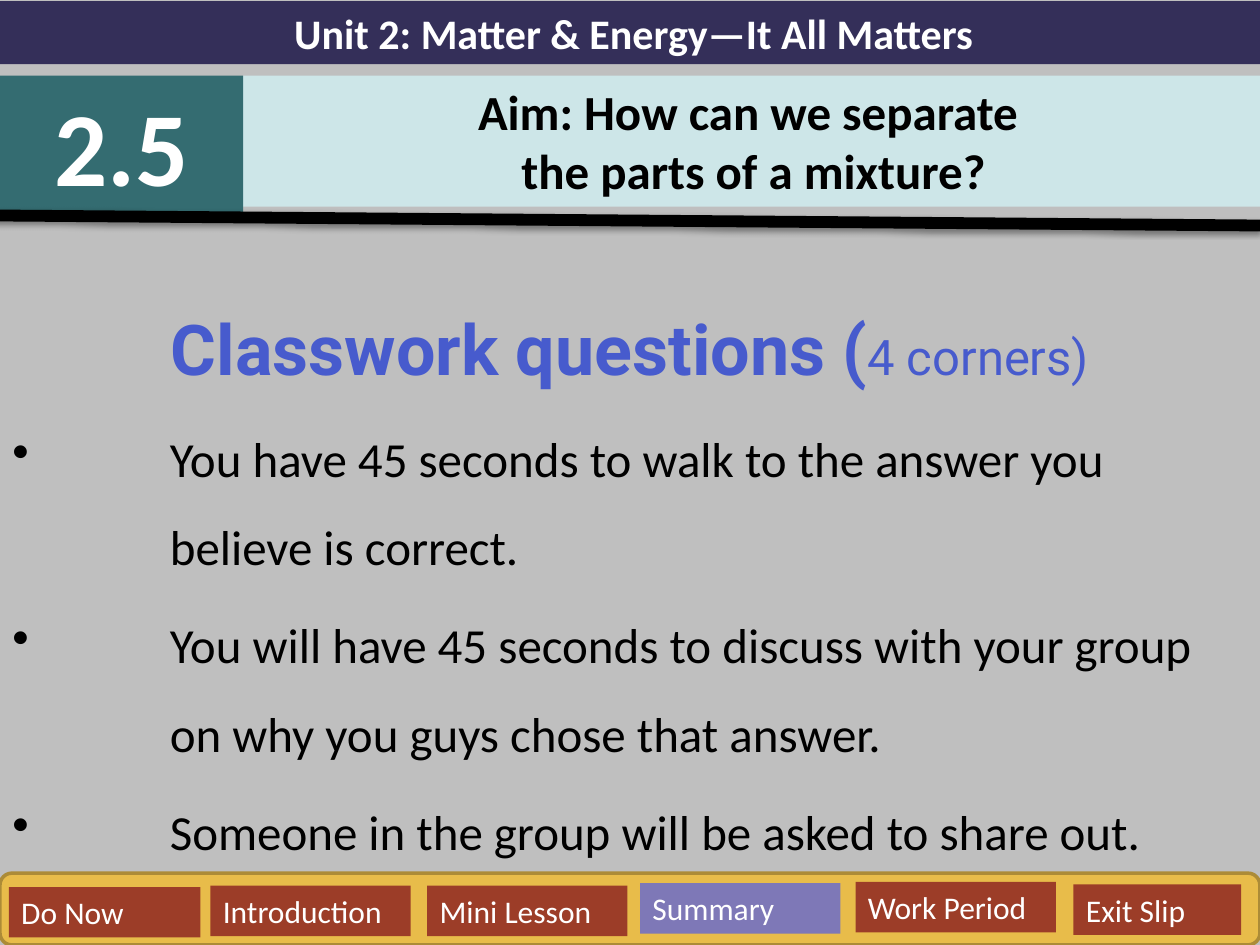
import dataclasses

import pptx
import pptx.dml.color
import pptx.enum.shapes
import pptx.enum.text
import pptx.oxml
import pptx.oxml.ns
import pptx.util

COLUMNS, ROWS = 100, 75
CELL = pptx.util.Inches(0.1)
ALIGN = pptx.enum.text.PP_ALIGN
SHAPES = pptx.enum.shapes.MSO_SHAPE


@dataclasses.dataclass(frozen=True)
class Theme:
    background: str = "BFBFBF"
    unit: str = "342F59"
    number: str = "346C71"
    aim: str = "CDE6E8"
    heading: str = "475BCD"
    bar: str = "E8BC4A"
    bar_edge: str = "AC8B37"
    tab: str = "9C3D28"
    active_tab: str = "7E78B7"
    light: str = "FFFFFF"
    dark: str = "000000"
    body_font: str = "Calibri"
    heading_font: str = "Roboto"
    number_size: int = 60
    heading_size: int = 40
    body_size: int = 28
    unit_size: int = 24
    tab_size: int = 18


THEME = Theme()


@dataclasses.dataclass(frozen=True)
class Box:
    left: float
    top: float
    width: float
    height: float

    def inner(self, left, top, width, height):
        return Box(self.left + left, self.top + top, width, height)

    def lengths(self):
        return [round(value * CELL) for value in dataclasses.astuple(self)]


def color(value):
    return pptx.dml.color.RGBColor.from_string(value)


def add_text(paragraph, text, size=THEME.body_size, font=THEME.body_font,
             fill=THEME.dark, bold=False, align=ALIGN.LEFT):
    paragraph.alignment = align
    run = paragraph.add_run()
    run.text = text
    run.font.size = pptx.util.Pt(size)
    run.font.name = font
    run.font.bold = bold
    run.font.color.rgb = color(fill)


def fill_shape(shape, fill):
    shape.fill.solid()
    shape.fill.fore_color.rgb = color(fill)


def add_panel(slide, box, fill, kind=SHAPES.RECTANGLE):
    shape = slide.shapes.add_shape(kind, *box.lengths())
    shape.shadow.inherit = False
    fill_shape(shape, fill)
    shape.line.fill.background()
    return shape


def add_label(slide, box, fill, text, **text_format):
    shape = add_panel(slide, box, fill)
    frame = shape.text_frame
    frame.word_wrap = True
    frame.vertical_anchor = pptx.enum.text.MSO_ANCHOR.TOP
    frame.auto_size = pptx.enum.text.MSO_AUTO_SIZE.SHAPE_TO_FIT_TEXT
    add_text(frame.paragraphs[0], text, fill=THEME.light, **text_format)


def place_aim(slide, box):
    title = slide.shapes.title
    title.left, title.top, title.width, title.height = box.lengths()
    fill_shape(title, THEME.aim)
    frame = title.text_frame
    frame.word_wrap = True
    frame.auto_size = pptx.enum.text.MSO_AUTO_SIZE.NONE
    frame.vertical_anchor = pptx.enum.text.MSO_ANCHOR.TOP
    lines = ("Aim: How can we separate ", "the parts of a mixture?")
    for index, line in enumerate(lines):
        paragraph = frame.add_paragraph() if index else frame.paragraphs[0]
        add_text(paragraph, line, bold=True, align=ALIGN.CENTER)


def add_rule(slide, box):
    left, top, width, height = box.lengths()
    rule = slide.shapes.add_connector(
        pptx.enum.shapes.MSO_CONNECTOR.STRAIGHT, left, top, left + width, top + height)
    rule.line.color.rgb = color(THEME.dark)
    rule.line.width = pptx.util.Pt(6.75)
    properties = rule.element.spPr
    properties.append(pptx.oxml.parse_xml(
        f'<a:effectLst {pptx.oxml.ns.nsdecls("a")}>'
        f'<a:outerShdw blurRad="{pptx.util.Pt(3.1)}" dist="{pptx.util.Pt(1.6)}" '
        f'dir="5400000" rotWithShape="0"><a:srgbClr val="{THEME.dark}">'
        '<a:alpha val="38000"/></a:srgbClr></a:outerShdw></a:effectLst>'))


def add_header(slide, box):
    add_label(slide, box.inner(0, 0, 100.6, 5), THEME.unit,
              "Unit 2: Matter & Energy—It All Matters",
              size=THEME.unit_size, bold=True, align=ALIGN.CENTER)
    add_label(slide, box.inner(0, 5.9, 19.3, 11.1), THEME.number, "2.5",
              size=THEME.number_size, bold=True, align=ALIGN.CENTER)
    place_aim(slide, box.inner(19.3, 5.9, 81, 10.4))
    add_rule(slide, box.inner(-0.5, 17, 100.5, 0.8))


def set_bullet(paragraph, indent):
    properties = paragraph._p.get_or_add_pPr()
    properties.set("marL", str(indent))
    properties.set("indent", str(-indent))
    properties.append(pptx.oxml.parse_xml(
        f'<a:buChar {pptx.oxml.ns.nsdecls("a")} char="•"/>'))


def add_questions(slide, box):
    frame = slide.shapes.add_textbox(*box.lengths()).text_frame
    frame.word_wrap = True
    heading = frame.paragraphs[0]
    heading_format = dict(font=THEME.heading_font, fill=THEME.heading, align=ALIGN.CENTER)
    add_text(heading, "Classwork questions (", size=THEME.heading_size, bold=True,
             **heading_format)
    add_text(heading, "4 corners)", **heading_format)
    instructions = (
        "You have 45 seconds to walk to the answer you believe is correct.",
        "You will have 45 seconds to discuss with your group on why you guys chose that answer.",
        "Someone in the group will be asked to share out.",
    )
    for instruction in instructions:
        paragraph = frame.add_paragraph()
        add_text(paragraph, instruction)
    for paragraph in frame.paragraphs:
        paragraph.line_spacing = 1.5
        paragraph.space_before = pptx.util.Pt(0.2 * THEME.body_size)
    for paragraph in frame.paragraphs[1:]:
        set_bullet(paragraph, pptx.util.Inches(1.25))


def add_navigation(slide, box, active):
    bar = add_panel(slide, box, THEME.bar, SHAPES.ROUNDED_RECTANGLE)
    bar.line.color.rgb = color(THEME.bar_edge)
    bar.line.width = pptx.util.Pt(2)
    tabs = (
        ("Do Now", 0.7, 1.1, 15.2),
        ("Introduction", 16.7, 1, 15.9),
        ("Mini Lesson", 33.9, 1, 15.9),
        ("Summary", 50.8, 0.8, 15.9),
        ("Work Period", 67.9, 0.7, 15.9),
        ("Exit Slip", 85.2, 0.9, 13.3),
    )
    for name, left, top, width in tabs:
        fill = THEME.active_tab if name == active else THEME.tab
        add_label(slide, box.inner(left, top, width, 4), fill, name, size=THEME.tab_size)


def main():
    presentation = pptx.Presentation()
    presentation.slide_width = COLUMNS * CELL
    presentation.slide_height = ROWS * CELL
    slide = presentation.slides.add_slide(presentation.slide_layouts.get_by_name("Title Only"))
    fill_shape(slide.background, THEME.background)
    add_questions(slide, Box(0, 20.4, COLUMNS, 49.8))
    add_header(slide, Box(0, 0.1, COLUMNS, 17.8))
    add_navigation(slide, Box(0, 69.3, COLUMNS, 5.7), active="Summary")
    presentation.save("out.pptx")


if __name__ == "__main__":
    main()
